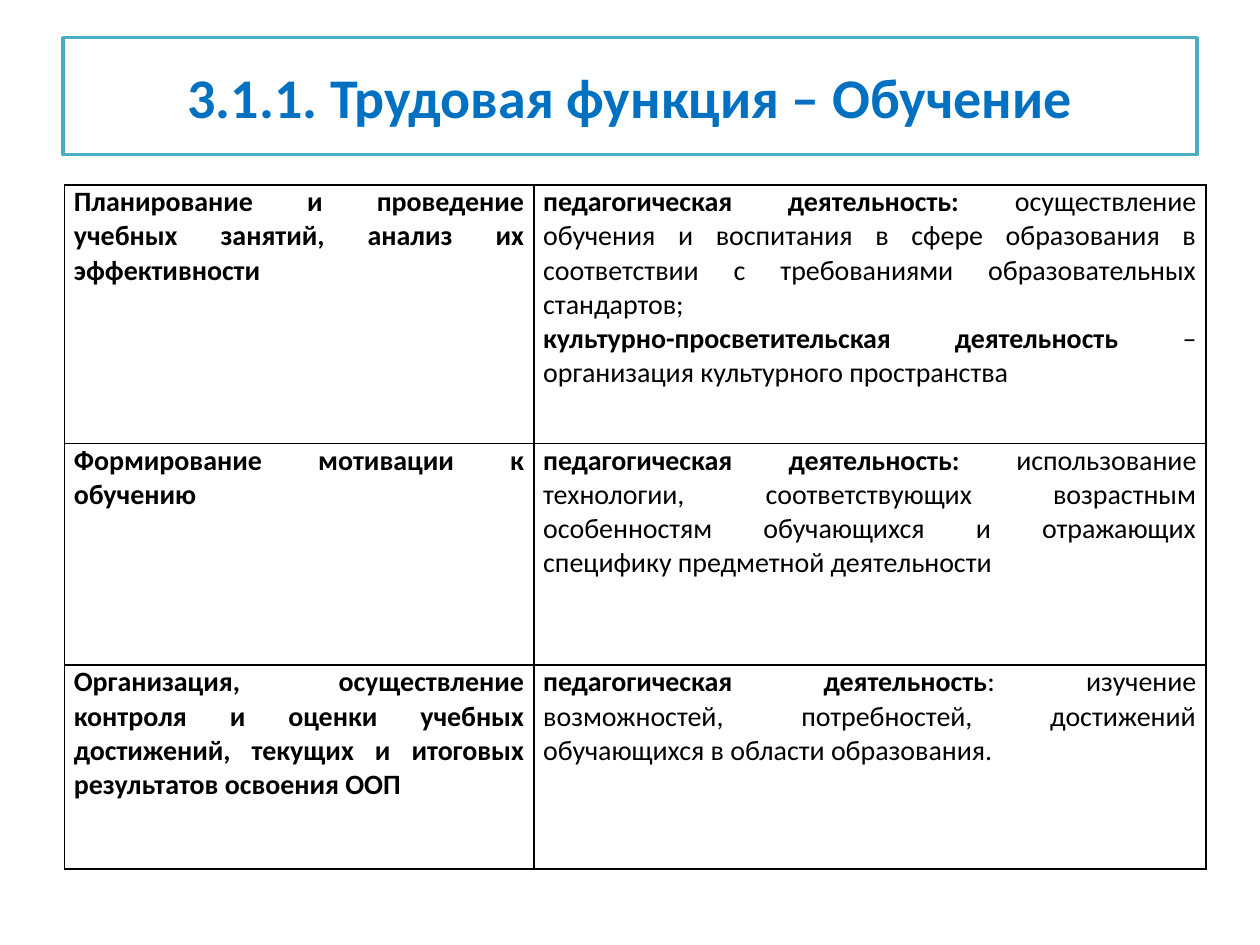
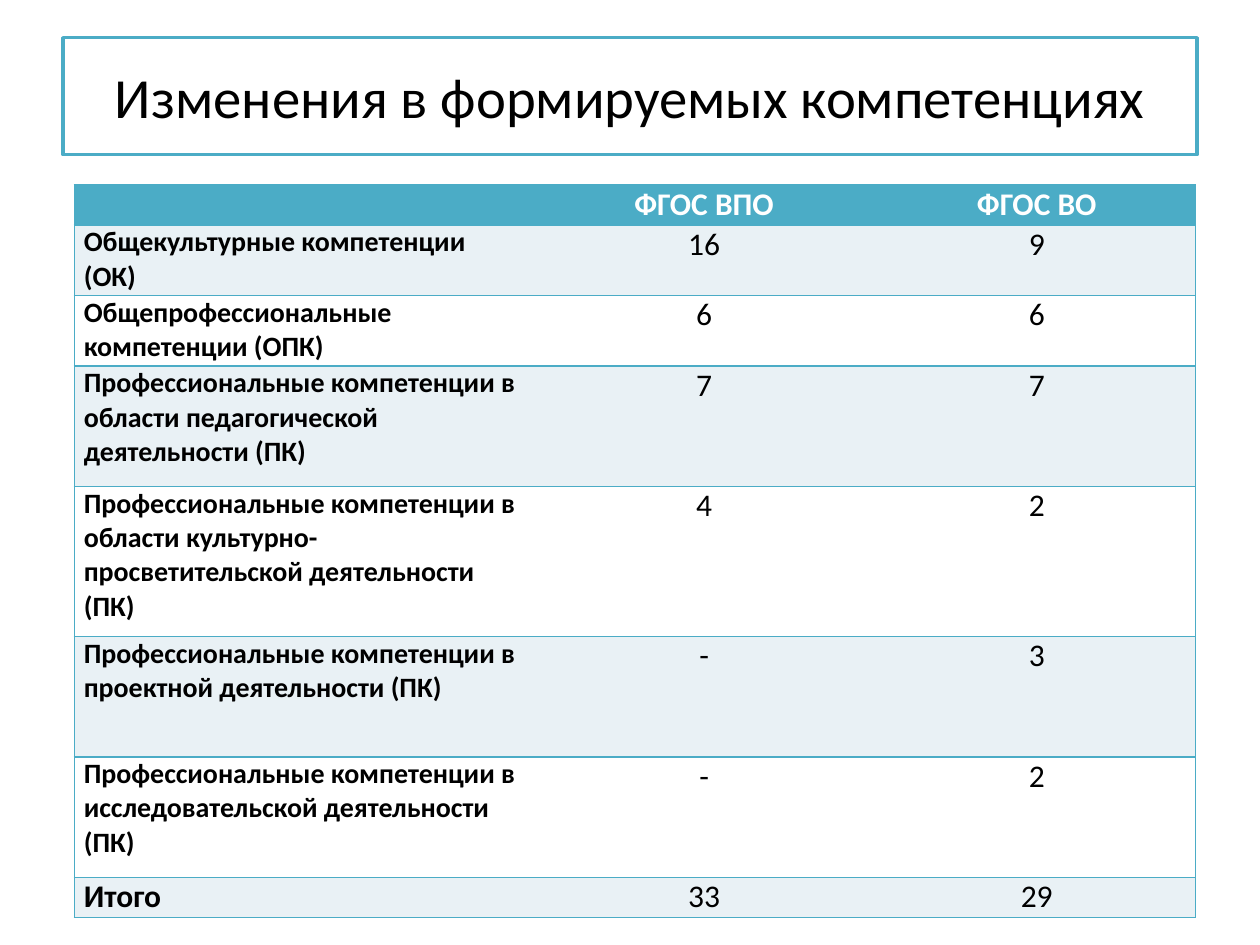
from dataclasses import dataclass
from typing import NamedTuple

from lxml import etree
from pptx import Presentation
from pptx.dml.color import RGBColor
from pptx.enum.shapes import MSO_SHAPE
from pptx.enum.text import MSO_ANCHOR, PP_ALIGN
from pptx.oxml.ns import qn
from pptx.util import Cm, Pt

RECT = MSO_SHAPE.RECTANGLE
MIDDLE = MSO_ANCHOR.MIDDLE
LEFT, CENTER, JUSTIFY = PP_ALIGN.LEFT, PP_ALIGN.CENTER, PP_ALIGN.JUSTIFY
BLANK = 6


@dataclass(frozen=True)
class Theme:
    font: str = "Calibri"
    white: str = "FFFFFF"
    black: str = "000000"
    teal: str = "4BACC6"
    blue: str = "0070C0"
    band: str = "E9F1F5"
    title_bold: float = 32
    title_plain: float = 32.4
    value: float = 18
    label: float = 16
    border: float = 1


class Span(NamedTuple):
    text: str
    bold: bool = False


@dataclass(frozen=True)
class CellSpec:
    paragraphs: list[list[Span]]
    size: float
    align: PP_ALIGN
    fill: str
    color: str


@dataclass(frozen=True)
class TableSpec:
    left: float
    cols: list[float]
    rows: list[float]
    cells: list[list[CellSpec]]
    line: str
    inner_verticals: bool


THEME = Theme()
TABLE_TOP = 3.73


def format_run(r, size: float, color: str, bold: bool) -> None:
    r.font.name = THEME.font
    r.font.size = Pt(size)
    r.font.bold = bold
    r.font.color.rgb = RGBColor.from_string(color)


def add_title(slide, text: str, size: float, color: str, bold: bool) -> None:
    sp = slide.shapes.add_shape(RECT, Cm(1.27), Cm(0.76), Cm(22.86), Cm(2.36))
    sp.shadow.inherit = False
    sp.fill.solid()
    sp.fill.fore_color.rgb = RGBColor.from_string(THEME.white)
    sp.line.color.rgb = RGBColor.from_string(THEME.teal)
    sp.line.width = Pt(2)
    tf = sp.text_frame
    tf.word_wrap = True
    tf.vertical_anchor = MIDDLE
    tf.text = text
    p = tf.paragraphs[0]
    p.alignment = CENTER
    format_run(p.runs[0], size, color, bold)


def set_border(cell, side: str, color: str | None) -> None:
    """Draw one cell side, or hide it when there is no colour."""
    tc_pr = cell._tc.get_or_add_tcPr()
    ln = etree.SubElement(tc_pr, qn(f"a:ln{side}"), w=str(Pt(THEME.border)))
    if color is None:
        etree.SubElement(ln, qn("a:noFill"))
    else:
        solid = etree.SubElement(ln, qn("a:solidFill"))
        etree.SubElement(solid, qn("a:srgbClr"), val=color)


def fill_cell(cell, spec: CellSpec) -> None:
    cell.fill.solid()
    cell.fill.fore_color.rgb = RGBColor.from_string(spec.fill)
    cell.margin_left = cell.margin_right = Cm(0.19)
    cell.margin_top = cell.margin_bottom = 0
    tf = cell.text_frame
    for i, spans in enumerate(spec.paragraphs):
        p = tf.add_paragraph() if i else tf.paragraphs[0]
        p.alignment = spec.align
        for span in spans:
            r = p.add_run()
            r.text = span.text
            format_run(r, spec.size, spec.color, span.bold)


def add_table(slide, spec: TableSpec) -> None:
    n_rows, n_cols = len(spec.rows), len(spec.cols)
    frame = slide.shapes.add_table(n_rows, n_cols, Cm(spec.left), Cm(TABLE_TOP),
                                   Cm(sum(spec.cols)), Cm(sum(spec.rows)))
    table = frame.table
    table.first_row = table.horz_banding = False
    for col, width in zip(table.columns, spec.cols):
        col.width = Cm(width)
    for row, height in zip(table.rows, spec.rows):
        row.height = Cm(height)
    inner = spec.line if spec.inner_verticals else None
    for i, row_cells in enumerate(spec.cells):
        for j, cell_spec in enumerate(row_cells):
            cell = table.cell(i, j)
            set_border(cell, "L", spec.line if j == 0 else inner)
            set_border(cell, "R", spec.line if j == n_cols - 1 else inner)
            set_border(cell, "T", spec.line)
            set_border(cell, "B", spec.line)
            fill_cell(cell, cell_spec)


# Slide 1: labour actions and the matching kinds of activity
ACTIVITIES = [
    ("Планирование и проведение учебных занятий, анализ их эффективности",
     [[Span("педагогическая деятельность: ", True),
       Span("осуществление обучения и воспитания в сфере образования "
            "в соответствии с требованиями образовательных стандартов;")],
      [Span("культурно-просветительская деятельность ", True),
       Span("– организация культурного пространства")]]),
    ("Формирование мотивации к обучению",
     [[Span("педагогическая деятельность: ", True),
       Span("использование технологии, соответствующих возрастным особенностям "
            "обучающихся и отражающих специфику предметной деятельности")]]),
    ("Организация, осуществление контроля и оценки учебных достижений, "
     "текущих и итоговых результатов освоения ООП",
     [[Span("педагогическая деятельность", True),
       Span(": изучение возможностей, потребностей, достижений обучающихся "
            "в области образования.")]]),
]


def activity_cell(paragraphs: list[list[Span]]) -> CellSpec:
    return CellSpec(paragraphs, THEME.label, JUSTIFY, THEME.white, THEME.black)


def build_activities(slide) -> None:
    add_title(slide, "3.1.1. Трудовая функция – Обучение",
              THEME.title_bold, THEME.blue, True)
    cells = [[activity_cell([[Span(action, True)]]), activity_cell(kinds)]
             for action, kinds in ACTIVITIES]
    add_table(slide, TableSpec(1.3, [9.46, 13.55], [5.21, 4.47, 4.11],
                               cells, THEME.black, True))


# Slide 2: number of competences under both standards
HEADER = ("", "ФГОС ВПО", "ФГОС ВО")
COMPETENCES = [
    ("Общекультурные компетенции (ОК)", "16", "9"),
    ("Общепрофессиональные компетенции (ОПК)", "6", "6"),
    ("Профессиональные компетенции в области педагогической деятельности (ПК)",
     "7", "7"),
    ("Профессиональные компетенции в области культурно-просветительской "
     "деятельности (ПК)", "4", "2"),
    ("Профессиональные компетенции в проектной деятельности (ПК)", "-", "3"),
    ("Профессиональные компетенции в исследовательской деятельности (ПК)",
     "-", "2"),
]
TOTAL = ("Итого", "33", "29")


def competence_row(index: int, texts: tuple[str, ...]) -> list[CellSpec]:
    is_header, is_total = texts == HEADER, texts == TOTAL
    color = THEME.white if is_header else THEME.black
    fill = THEME.teal if is_header else THEME.band if index % 2 else THEME.white
    label_size = THEME.value if is_header or is_total else THEME.label
    label_align = JUSTIFY if is_total else LEFT
    label, *values = texts
    label_spans = [Span(label, True)] if label else []
    return [CellSpec([label_spans], label_size, label_align, fill, color)] + [
        CellSpec([[Span(value, is_header)]], THEME.value, CENTER, fill, color)
        for value in values]


def build_competences(slide) -> None:
    add_title(slide, "Изменения в формируемых компетенциях",
              THEME.title_plain, THEME.black, False)
    cells = [competence_row(i, texts)
             for i, texts in enumerate([HEADER, *COMPETENCES, TOTAL])]
    heights = [0.81, 1.42, 1.42, 2.43, 3.02, 2.43, 2.43, 0.81]
    add_table(slide, TableSpec(1.5, [9.19, 7.01, 6.4], heights,
                               cells, THEME.teal, False))


def main() -> None:
    prs = Presentation()
    prs.slide_width, prs.slide_height = Cm(25.4), Cm(19.05)
    for build in (build_activities, build_competences):
        build(prs.slides.add_slide(prs.slide_layouts[BLANK]))
    prs.save("out.pptx")


if __name__ == "__main__":
    main()
